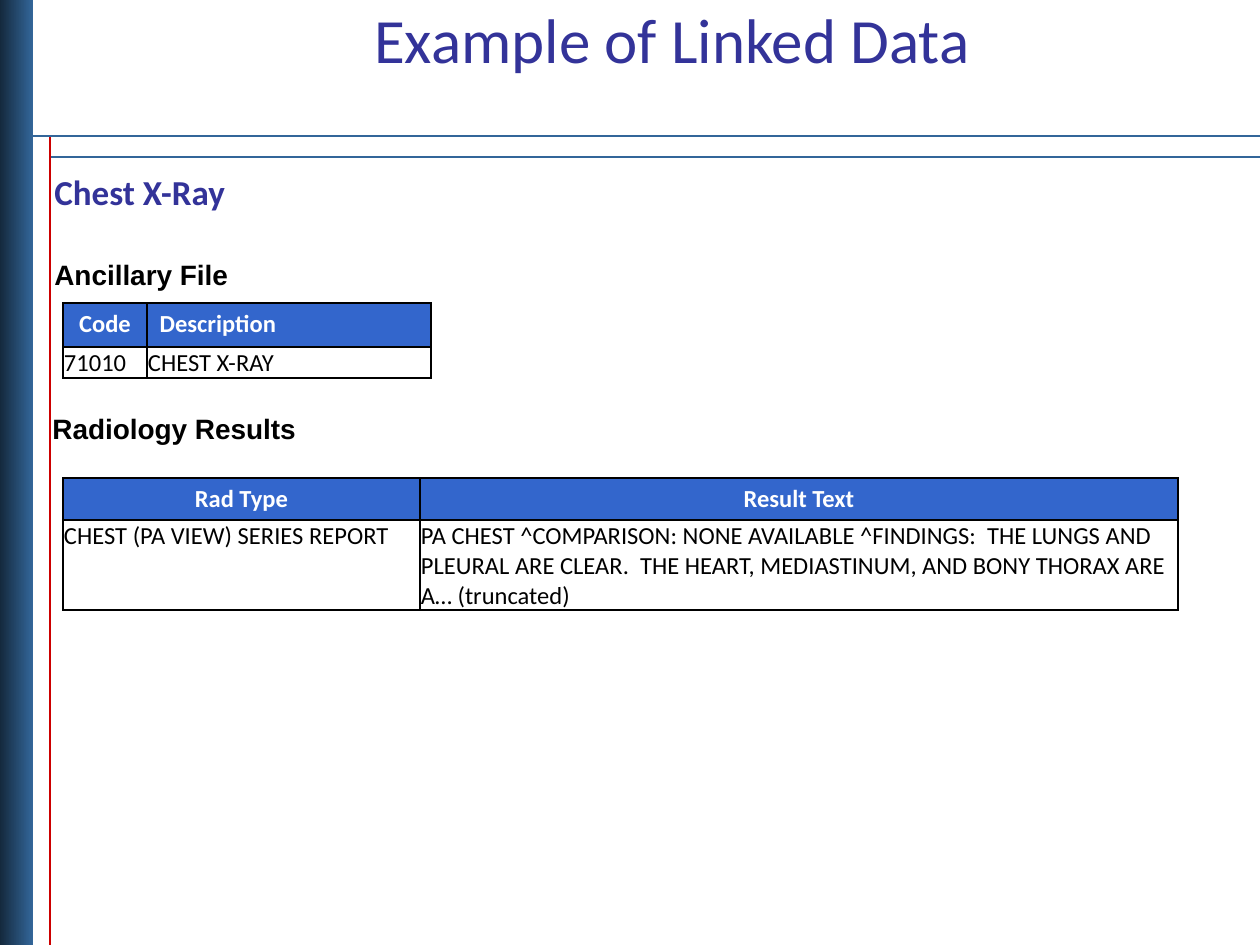
from lxml.etree import SubElement
from pptx import Presentation
from pptx.dml.color import RGBColor
from pptx.enum.shapes import MSO_CONNECTOR, MSO_SHAPE
from pptx.enum.text import MSO_ANCHOR, PP_ALIGN
from pptx.oxml import parse_xml
from pptx.oxml.ns import nsdecls, qn
from pptx.util import Emu, Pt

PX = 914400 // 126
WIDTH, HEIGHT = 1260, 945
NAVY, STEEL, RED, INDIGO = "14293D", "336699", "CC0000", "333399"
HEADER_BLUE, WHITE, BLACK = "3366CC", "FFFFFF", "000000"
LEFT, CENTER = PP_ALIGN.LEFT, PP_ALIGN.CENTER
TOP, MIDDLE, BOTTOM = MSO_ANCHOR.TOP, MSO_ANCHOR.MIDDLE, MSO_ANCHOR.BOTTOM

# start, end, colour, width in points
RULES = [
    ((50, 157), (WIDTH, 157), STEEL, 1),
    ((50, 136), (50, HEIGHT), RED, 0.75),
    ((0, 136), (WIDTH, 136), STEEL, 1.5),
]
SIDEBAR = (0, 0, 33, HEIGHT)

# text, box, font, size, colour, bold, alignment, anchor, space before
TEXTS = [
    ("Example of Linked Data", (210, 0, 924, 76), "Calibri", 36, INDIGO, False, CENTER, MIDDLE, 0),
    ("Chest X-Ray", (42, 164, 1134, 624), "Calibri", 20, INDIGO, True, LEFT, TOP, 4),
    ("Ancillary File", (42, 251, 252, 47), "Arial", 16, BLACK, True, LEFT, TOP, 0),
    ("Radiology Results", (40, 405, 325, 47), "Arial", 16, BLACK, True, LEFT, TOP, 0),
]

TABLES = [
    {
        "at": (63, 303), "columns": [84, 284], "rows": [44, 31],
        "header_alignments": [CENTER, LEFT], "body_anchor": BOTTOM,
        "cells": [["Code", "Description"], ["71010", "CHEST X-RAY"]],
    },
    {
        "at": (63, 478), "columns": [357, 758], "rows": [42, 90],
        "header_alignments": [CENTER, CENTER], "body_anchor": TOP,
        "cells": [
            ["Rad Type", "Result Text"],
            ["CHEST (PA VIEW) SERIES REPORT",
             "PA CHEST ^COMPARISON: NONE AVAILABLE ^FINDINGS:  THE LUNGS AND "
             "PLEURAL ARE CLEAR.  THE HEART, MEDIASTINUM, AND BONY THORAX ARE "
             "A… (truncated)"],
        ],
    },
]


def px(*lengths):
    return [Emu(length * PX) for length in lengths]


def color(value):
    return RGBColor.from_string(value)


def style_paragraph(paragraph, font_name, size, text_color, bold, alignment):
    paragraph.alignment = alignment
    font = paragraph.font
    font.name, font.size, font.bold = font_name, Pt(size), bold
    font.color.rgb = color(text_color)


def add_rule(slide, start, end, line_color, width):
    rule = slide.shapes.add_connector(MSO_CONNECTOR.STRAIGHT, *px(*start, *end))
    rule.line.color.rgb = color(line_color)
    rule.line.width = Pt(width)
    SubElement(rule._element.spPr, qn("a:effectLst"))


def add_sidebar(slide):
    sidebar = slide.shapes.add_shape(MSO_SHAPE.RECTANGLE, *px(*SIDEBAR))
    sidebar.shadow.inherit = False
    sidebar.line.fill.background()
    sidebar.fill.gradient()
    sidebar.fill.gradient_angle = 0
    for stop, position, stop_color in zip(sidebar.fill.gradient_stops, (0, 1), (NAVY, STEEL)):
        stop.position = position
        stop.color.rgb = color(stop_color)


def add_text(slide, text, box, font_name, size, text_color, bold, alignment, anchor, space_before):
    frame = slide.shapes.add_textbox(*px(*box)).text_frame
    frame.word_wrap = True
    frame.vertical_anchor = anchor
    paragraph = frame.paragraphs[0]
    paragraph.text = text
    paragraph.space_before = Pt(space_before)
    style_paragraph(paragraph, font_name, size, text_color, bold, alignment)


def add_borders(cell):
    properties = cell._tc.get_or_add_tcPr()
    for index, side in enumerate(("lnL", "lnR", "lnT", "lnB")):
        properties.insert(index, parse_xml(
            f'<a:{side} {nsdecls("a")} w="{Pt(1)}"><a:solidFill>'
            f'<a:srgbClr val="{BLACK}"/></a:solidFill></a:{side}>'))


def add_table(slide, data):
    columns, rows = data["columns"], data["rows"]
    table = slide.shapes.add_table(
        len(rows), len(columns), *px(*data["at"], sum(columns), sum(rows))).table
    for column, width in zip(table.columns, px(*columns)):
        column.width = width
    for row, height in zip(table.rows, px(*rows)):
        row.height = height
    for row_index, texts in enumerate(data["cells"]):
        is_header = row_index == 0
        for column_index, text in enumerate(texts):
            cell = table.cell(row_index, column_index)
            cell.text = text
            cell.fill.solid()
            cell.fill.fore_color.rgb = color(HEADER_BLUE if is_header else WHITE)
            alignment = data["header_alignments"][column_index] if is_header else LEFT
            style_paragraph(cell.text_frame.paragraphs[0], "Calibri", 14,
                            WHITE if is_header else BLACK, is_header, alignment)
            if not is_header:
                cell.vertical_anchor = data["body_anchor"]
                cell.margin_left, cell.margin_right, cell.margin_top, cell.margin_bottom = px(1, 1, 1, 0)
            add_borders(cell)


def main():
    presentation = Presentation()
    presentation.slide_width, presentation.slide_height = px(WIDTH, HEIGHT)
    slide = presentation.slides.add_slide(presentation.slide_layouts[6])
    for rule in RULES:
        add_rule(slide, *rule)
    add_sidebar(slide)
    for text in TEXTS:
        add_text(slide, *text)
    for data in TABLES:
        add_table(slide, data)
    presentation.save("out.pptx")


if __name__ == "__main__":
    main()
